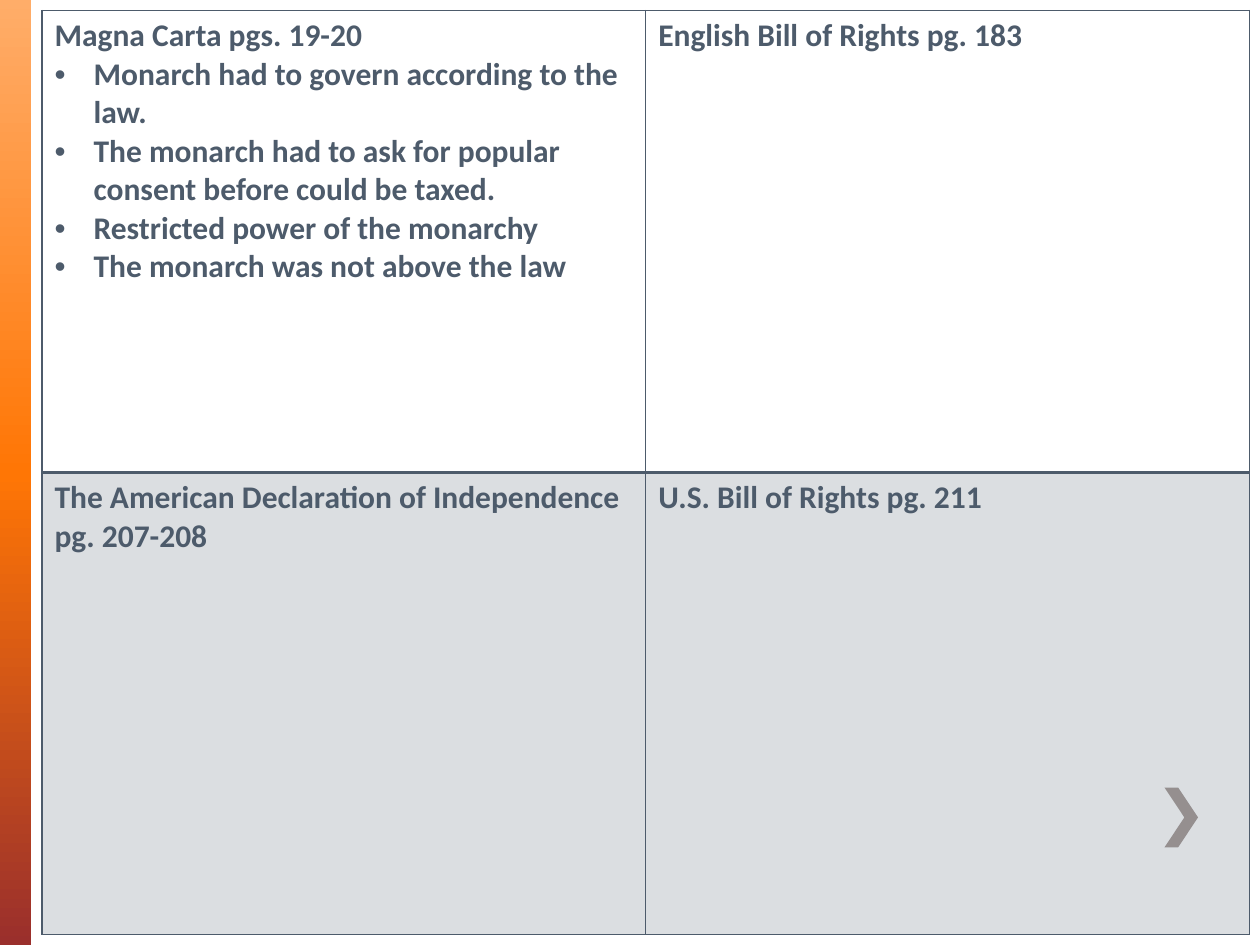
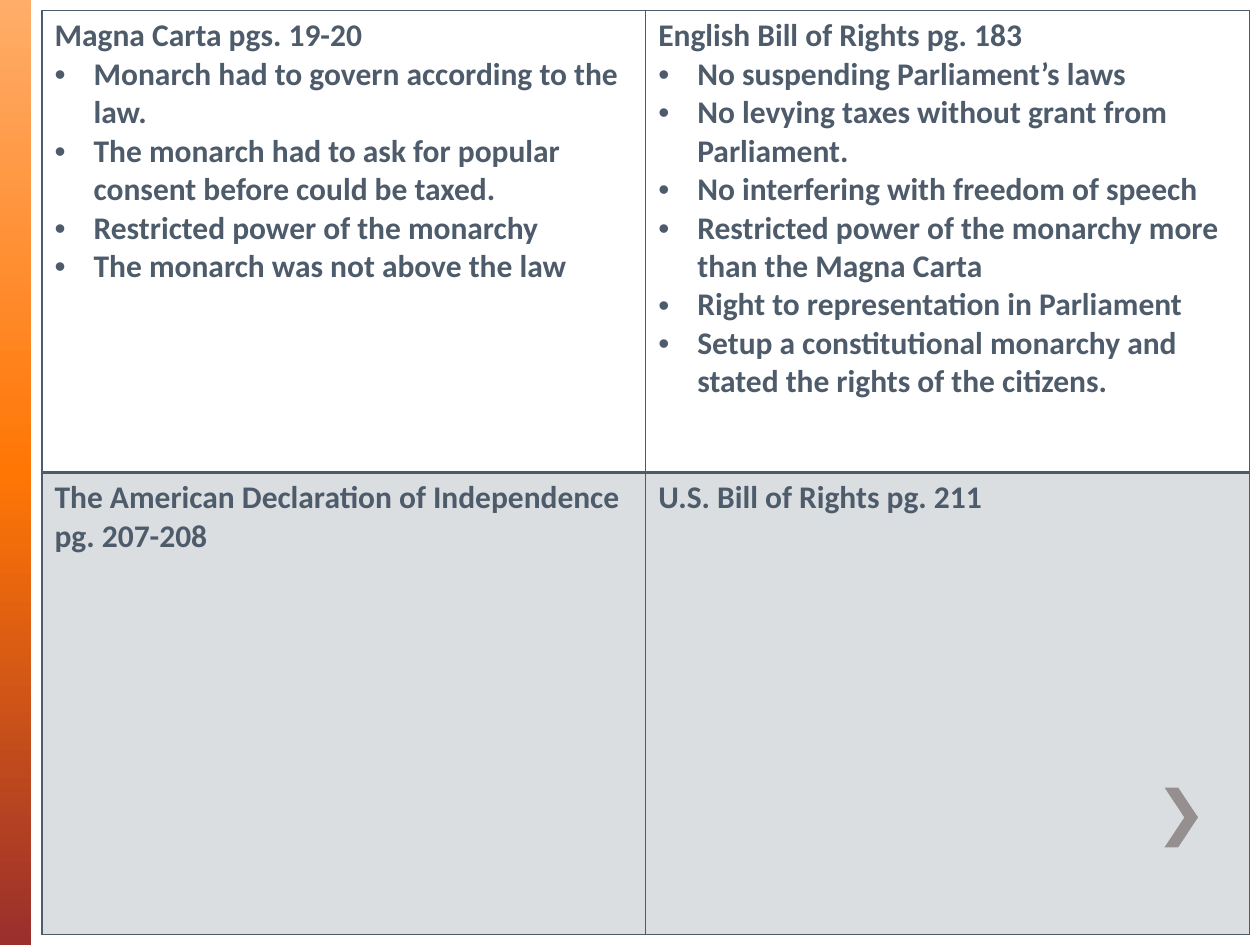
import copy

import lxml.etree
import pptx
import pptx.dml.color
import pptx.enum.shapes
import pptx.oxml.ns
import pptx.util

SLATE = pptx.dml.color.RGBColor(0x4D, 0x5B, 0x6B)
TAUPE = pptx.dml.color.RGBColor(0xA7, 0x9D, 0x99)
PEACH = pptx.dml.color.RGBColor(0xFF, 0xAD, 0x69)
ORANGE = pptx.dml.color.RGBColor(0xFF, 0x76, 0x05)
BRICK = pptx.dml.color.RGBColor(0x9A, 0x2F, 0x2C)

COLUMNS, ROWS = 120, 90
UNIT = pptx.util.Inches(10) // COLUMNS
BULLET_INDENT = pptx.util.Inches(0.31)
SHADE_OPACITY = 20

MAGNA_CARTA = ("Magna Carta pgs. 19-20", [
    "Monarch had to govern according to the law.",
    "The monarch had to ask for popular consent before could be taxed.",
    "Restricted power of the monarchy",
    "The monarch was not above the law",
])
ENGLISH_RIGHTS = "English Bill of Rights pg. 183"
ENGLISH_POINTS = [
    "No suspending Parliament’s laws",
    "No levying taxes without grant from Parliament.",
    "No interfering with freedom of speech",
    "Restricted power of the monarchy more than the Magna Carta",
    "Right to representation in Parliament",
    "Setup a constitutional monarchy and stated the rights of the citizens.",
]
AMERICAN_ROW = [
    ("The American Declaration of Independence pg. 207-208", []),
    ("U.S. Bill of Rights pg. 211", []),
]


def grid(*counts):
    return [round(count * UNIT) for count in counts]


def add_xml(parent, tag, **attributes):
    return lxml.etree.SubElement(parent, pptx.oxml.ns.qn(tag), attributes)


class DocumentDeck:
    """Holds the shared style and the slide being built."""

    text_format = {"name": "Calibri", "size": pptx.util.Pt(18), "bold": True}

    def __init__(self):
        self.deck = pptx.Presentation()
        self.deck.slide_width, self.deck.slide_height = grid(COLUMNS, ROWS)
        self.page = None

    def start_page(self):
        self.page = self.deck.slides.add_slide(self.deck.slide_layouts[6])
        self.add_band()
        self.add_chevron()

    def add_band(self):
        band = self.page.shapes.add_shape(
            pptx.enum.shapes.MSO_SHAPE.RECTANGLE, *grid(0, 0, 3, ROWS))
        band.shadow.inherit = False
        band.line.fill.background()
        band.fill.gradient()
        band.fill.gradient_angle = 270
        stop_list = band._element.spPr.find(".//" + pptx.oxml.ns.qn("a:gsLst"))
        stop_list.append(copy.deepcopy(stop_list[0]))
        colours = (PEACH, ORANGE, BRICK)
        for index, stop in enumerate(band.fill.gradient_stops):
            stop.position = index / 2
            stop.color.rgb = colours[index]

    def add_chevron(self):
        left, shoulder, notch, tip = 110.9, 112.2, 112.8, 114.1
        top, middle, bottom = 75, 77.85, 80.7
        outline = [(left, top), (notch, middle), (left, bottom),
                   (shoulder, bottom), (tip, middle)]
        builder = self.page.shapes.build_freeform(*grid(shoulder, top))
        builder.add_line_segments([grid(*point) for point in outline])
        chevron = builder.convert_to_shape()
        chevron.shadow.inherit = False
        chevron.fill.solid()
        chevron.fill.fore_color.rgb = TAUPE
        chevron.line.fill.background()

    def add_comparison(self, rows):
        frame = self.page.shapes.add_table(
            len(rows), len(rows[0]), *grid(4, 1, 115, 88))
        table = frame.table
        table.first_row = table.horz_banding = False
        for row_index, row in enumerate(rows):
            lower = row_index > 0
            for column_index, (heading, points) in enumerate(row):
                cell = table.cell(row_index, column_index)
                self.draw_borders(cell, {"L": 1, "R": 1,
                                         "T": 2 if lower else 1,
                                         "B": 1 if lower else 2})
                self.shade(cell, lower)
                self.add_list(cell.text_frame, heading, points)

    def draw_borders(self, cell, widths):
        properties = cell._tc.get_or_add_tcPr()
        for side, width in widths.items():
            border = add_xml(properties, "a:ln" + side,
                             w=str(pptx.util.Pt(width)))
            add_xml(add_xml(border, "a:solidFill"), "a:srgbClr", val=str(SLATE))

    def shade(self, cell, shaded):
        if not shaded:
            cell.fill.background()
            return
        cell.fill.solid()
        cell.fill.fore_color.rgb = SLATE
        colour = cell._tc.tcPr.find(
            pptx.oxml.ns.qn("a:solidFill") + "/" + pptx.oxml.ns.qn("a:srgbClr"))
        add_xml(colour, "a:alpha", val=str(SHADE_OPACITY * 1000))

    def add_list(self, box, heading, points):
        self.add_span(box.paragraphs[0], heading)
        for point in points:
            para = box.add_paragraph()
            properties = para._p.get_or_add_pPr()
            properties.set("marL", str(BULLET_INDENT))
            properties.set("indent", str(-BULLET_INDENT))
            add_xml(properties, "a:buFont", typeface="Arial")
            add_xml(properties, "a:buChar", char="•")
            self.add_span(para, point)

    def add_span(self, para, text):
        span = para.add_run()
        span.text = text
        for name, value in self.text_format.items():
            setattr(span.font, name, value)
        span.font.color.rgb = SLATE


def main():
    builder = DocumentDeck()
    for english_points in ([], ENGLISH_POINTS):
        builder.start_page()
        builder.add_comparison([
            [MAGNA_CARTA, (ENGLISH_RIGHTS, english_points)],
            AMERICAN_ROW,
        ])
    builder.deck.save("out.pptx")


if __name__ == "__main__":
    main()
